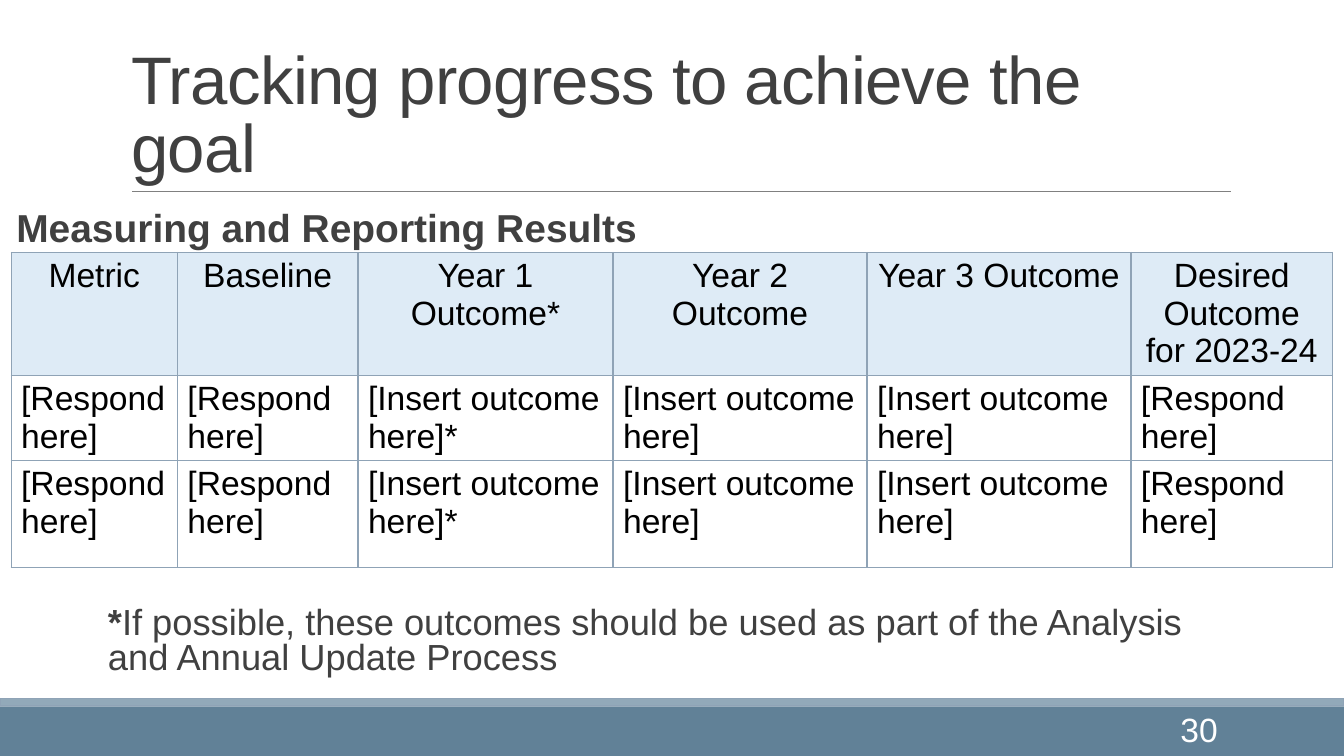
import pptx
import pptx.dml.color
import pptx.enum.shapes
import pptx.enum.text
import pptx.oxml
import pptx.oxml.ns
import pptx.util
from pptx.util import Cm

ANCHOR = pptx.enum.text.MSO_ANCHOR
ALIGN = pptx.enum.text.PP_ALIGN
COMPARISON_LAYOUT = 4
INK, BORDER = "404040", "8FA3B6"

COLUMN_WIDTHS = [4.19, 4.55, 6.43, 6.4, 6.65, 5.08]
ROW_HEIGHTS = [3.1, 2.14, 2.7]
HEADERS = ["Metric", "Baseline", "Year 1 Outcome*", "Year 2 Outcome",
           "Year 3 Outcome", "Desired Outcome for 2023-24"]
RESPONSES = ["[Respond here]", "[Respond here]", "[Insert outcome here]*",
             "[Insert outcome here]", "[Insert outcome here]", "[Respond here]"]


def rgb(hex_code):
    return pptx.dml.color.RGBColor.from_string(hex_code)


def place(shape, left, top, width, height):
    shape.left, shape.top = Cm(left), Cm(top)
    shape.width, shape.height = Cm(width), Cm(height)


def style_runs(paragraph, size, color, bold=False):
    for run in paragraph.runs:
        run.font.name = "Arial"
        run.font.size = pptx.util.Pt(size)
        run.font.color.rgb = rgb(color)
        run.font.bold = bold


def add_bar(slide, top, height, fill, line=None):
    """Add a band across the full width of the slide."""
    bar = slide.shapes.add_shape(pptx.enum.shapes.MSO_SHAPE.RECTANGLE,
                                 0, Cm(top), Cm(33.87), Cm(height))
    bar.shadow.inherit = False
    bar.fill.solid()
    bar.fill.fore_color.rgb = rgb(fill)
    if line:
        bar.line.color.rgb = rgb(line)
        bar.line.width = pptx.util.Pt(1.25)
    else:
        bar.line.fill.background()


def add_title_rule(slide):
    rule = slide.shapes.add_connector(pptx.enum.shapes.MSO_CONNECTOR.STRAIGHT,
                                      Cm(3.33), Cm(4.83), Cm(31.01), Cm(4.83))
    rule.line.color.rgb = rgb("808080")
    rule.line.width = pptx.util.Pt(0.5)
    properties = rule.element.find(pptx.oxml.ns.qn("p:spPr"))
    properties.append(pptx.oxml.parse_xml(
        f'<a:effectLst {pptx.oxml.ns.nsdecls("a")}/>'))


def fill_title(title):
    place(title, 3.05, 0.79, 27.94, 4.04)
    frame = title.text_frame
    frame.text = "Tracking progress to achieve the goal"
    frame.auto_size = pptx.enum.text.MSO_AUTO_SIZE.NONE
    frame.vertical_anchor = ANCHOR.BOTTOM
    paragraph = frame.paragraphs[0]
    paragraph.alignment = ALIGN.LEFT
    paragraph.line_spacing = 0.85
    style_runs(paragraph, 48, INK)
    paragraph.runs[0].font._element.set("spc", "-50")


def fill_body(body, bounds, text, size, bold):
    place(body, *bounds)
    frame = body.text_frame
    frame.text = text
    frame.auto_size = pptx.enum.text.MSO_AUTO_SIZE.NONE
    frame.vertical_anchor = ANCHOR.TOP
    frame.margin_left = frame.margin_right = Cm(0.13)
    frame.margin_top = frame.margin_bottom = Cm(0.13)
    paragraph = frame.paragraphs[0]
    paragraph.line_spacing = 0.8
    paragraph.space_before = pptx.util.Pt(0)
    paragraph.space_after = pptx.util.Pt(2)
    style_runs(paragraph, size, INK, bold)
    return paragraph


def add_borders(cell):
    for side in ("lnL", "lnR", "lnT", "lnB"):
        cell._tc.get_or_add_tcPr().append(pptx.oxml.parse_xml(
            f'<a:{side} {pptx.oxml.ns.nsdecls("a")} w="12700"><a:solidFill>'
            f'<a:srgbClr val="{BORDER}"/></a:solidFill></a:{side}>'))


def fill_cell(cell, text, is_header):
    add_borders(cell)
    if is_header:
        cell.fill.solid()
        cell.fill.fore_color.rgb = rgb("DEEBF6")
    else:
        cell.fill.background()
    cell.text_frame.text = text
    paragraph = cell.text_frame.paragraphs[0]
    paragraph.alignment = ALIGN.CENTER if is_header else ALIGN.LEFT
    style_runs(paragraph, 24, "000000")


def add_results_table(slide):
    rows = [HEADERS, RESPONSES, RESPONSES]
    results = slide.shapes.add_table(
        len(rows), len(HEADERS), Cm(0.28), Cm(6.36),
        Cm(sum(COLUMN_WIDTHS)), Cm(sum(ROW_HEIGHTS))).table
    results.first_row = results.horz_banding = False
    for column, width in zip(results.columns, COLUMN_WIDTHS):
        column.width = Cm(width)
    for row_index, (texts, height) in enumerate(zip(rows, ROW_HEIGHTS)):
        results.rows[row_index].height = Cm(height)
        for column_index, text in enumerate(texts):
            fill_cell(results.cell(row_index, column_index), text, row_index == 0)


def add_page_number(slide):
    frame = slide.shapes.add_textbox(Cm(27.31), Cm(17.86),
                                     Cm(3.63), Cm(1.02)).text_frame
    frame.word_wrap = True
    frame.vertical_anchor = ANCHOR.MIDDLE
    frame.text = "30"
    frame.paragraphs[0].alignment = ALIGN.RIGHT
    style_runs(frame.paragraphs[0], 24, "FFFFFF")


def main():
    deck = pptx.Presentation()
    deck.slide_width, deck.slide_height = Cm(33.87), Cm(19.05)
    slide = deck.slides.add_slide(deck.slide_layouts[COMPARISON_LAYOUT])
    heading, left_content, footnote, right_content = list(slide.placeholders)[1:5]
    for unused in (left_content, right_content):
        unused.element.getparent().remove(unused.element)

    add_bar(slide, 17.8, 1.25, "618197")
    add_bar(slide, 17.6, 0.18, "92A9B9", BORDER)
    add_title_rule(slide)
    fill_title(slide.shapes.title)
    fill_body(heading, (0.28, 5.23, 22.2, 2.29),
              "Measuring and Reporting Results", 27.8, True)
    add_results_table(slide)
    note = fill_body(footnote, (2.59, 15.19, 28.4, 2.13), "*", 25.9, True)
    note.add_run().text = ("If possible, these outcomes should be used as part "
                           "of the Analysis and Annual Update Process")
    style_runs(note, 25.9, INK)
    note.runs[0].font.bold = True
    add_page_number(slide)
    deck.save("out.pptx")


if __name__ == "__main__":
    main()
